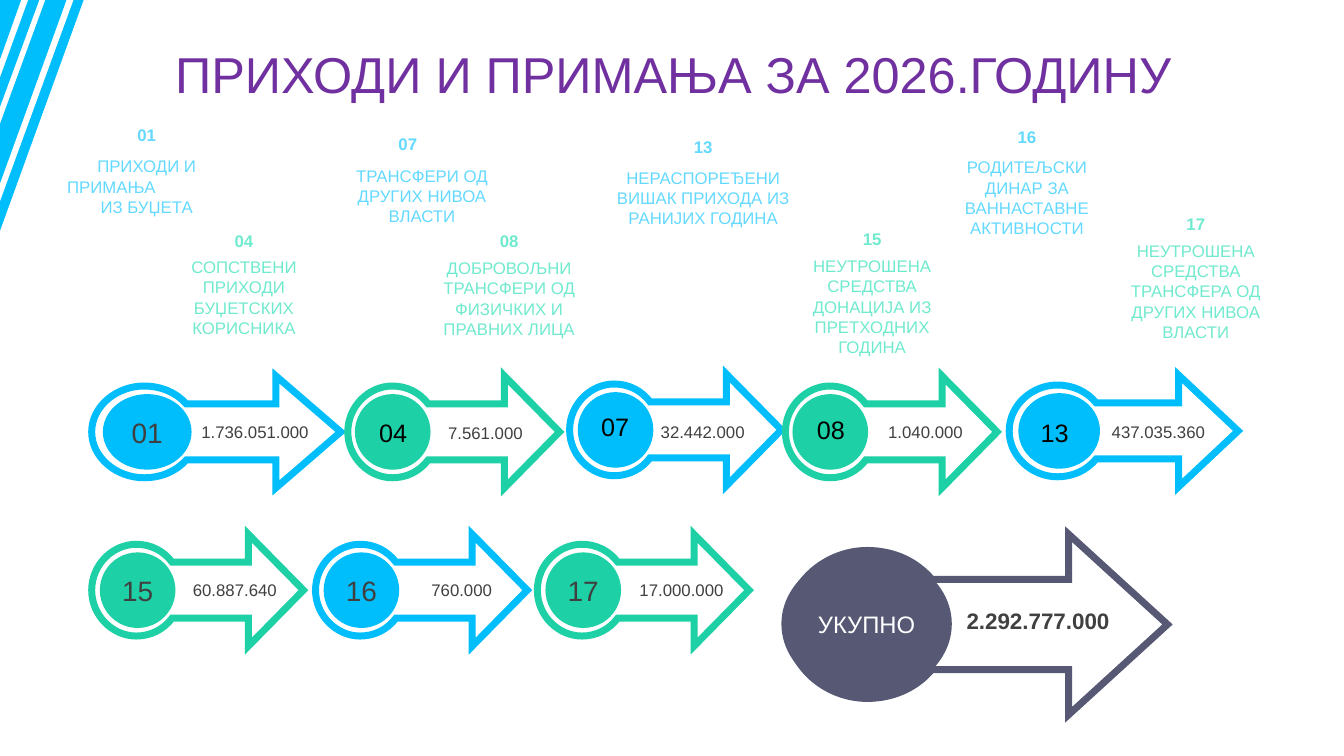
from lxml.etree import SubElement
from pptx import Presentation
from pptx.dml.color import RGBColor
from pptx.enum.shapes import MSO_SHAPE as Preset
from pptx.enum.text import MSO_ANCHOR as Anchor, PP_ALIGN as Align
from pptx.oxml.ns import qn
from pptx.util import Inches, Pt

BLUE = RGBColor(0x00, 0xBD, 0xFB)
GREEN = RGBColor(0x1E, 0xD0, 0xA6)
LIGHT_BLUE = RGBColor(0x64, 0xD9, 0xFF)
LIGHT_GREEN = RGBColor(0x70, 0xEA, 0xCE)
SLATE = RGBColor(0x56, 0x58, 0x74)
PURPLE = RGBColor(0x70, 0x30, 0xA0)
GREY = RGBColor(0x40, 0x40, 0x40)
BLACK = RGBColor(0x00, 0x00, 0x00)
WHITE = RGBColor(0xFF, 0xFF, 0xFF)

deck = Presentation()
deck.slide_width, deck.slide_height = Inches(13.33), Inches(7.5)
page = deck.slides.add_slide(deck.slide_layouts[5])


def write_text(text, holder=None, at=None, size=12, color=GREY, bold=False,
               anchor=Anchor.MIDDLE, wrap=True):
    """Write centred text into a shape, or into a new text box placed at `at`."""
    holder = holder or page.shapes.add_textbox(*map(Inches, at))
    frame = holder.text_frame
    frame.text = text
    frame.word_wrap = wrap
    frame.vertical_anchor = anchor
    for para in frame.paragraphs:
        para.alignment = Align.CENTER
        para.font.name = "Arial"
        para.font.size = Pt(size)
        para.font.bold = bold
        para.font.color.rgb = color
    return frame


def draw_outline(contours, fill, line=None, curves=0):
    """Draw closed contours of (x, y) inches; the last `curves` point triples are Béziers."""
    contours = [[(Inches(x), Inches(y)) for x, y in contour] for contour in contours]
    builder = page.shapes.build_freeform(*contours[0][0])
    builder.add_line_segments(contours[0][1:])
    for contour in contours[1:]:
        builder.move_to(*contour[0])
        builder.add_line_segments(contour[1:])
    shape = builder.convert_to_shape()
    shape.shadow.inherit = False
    shape.fill.solid()
    shape.fill.fore_color.rgb = fill
    if line is None:
        shape.line.fill.background()
    else:
        shape.line.color.rgb = line
        shape.line.width = Pt(5)
        SubElement(shape.line._get_or_add_ln(), qn("a:miter"), lim="800000")
    if curves:
        outline = next(shape._element.iter(qn("a:path")))
        segments = outline.findall(qn("a:lnTo"))[-3 * curves:]
        closing = outline.find(qn("a:close"))
        for first in range(0, len(segments), 3):
            curve = SubElement(outline, qn("a:cubicBezTo"))
            for segment in segments[first:first + 3]:
                curve.append(segment[0])
                outline.remove(segment)
        outline.append(closing)


# Corner stripes
draw_outline([
    [(0.73, 0), (0.83, 0), (0, 2.29), (0, 2)],
    [(0.39, 0), (0, 1.06), (0, 0.77), (0.28, 0)],
    [(0.66, 0), (0, 1.82), (0, 1.23), (0.45, 0)],
    [(0, 0), (0.21, 0), (0, 0.59)],
], BLUE)

# Title
title = page.shapes.title
title.left, title.top, title.width, title.height = map(Inches, (0.35, 0.37, 12.66, 0.79))
heading = write_text("ПРИХОДИ И ПРИМАЊА ЗА 2026.ГОДИНУ", title, size=36, color=PURPLE)
heading.paragraphs[0].line_spacing = 0.9

# Legend: number, its left, description, its left, top, width, height, number step, colour
legend = [
    ("01", 0.46, "ПРИХОДИ И\nПРИМАЊА\nИЗ БУЏЕТА", 0.46, 1.19, 1.99, 0.71, 0.31, LIGHT_BLUE),
    ("04", 1.46, "СОПСТВЕНИ ПРИХОДИ БУЏЕТСКИХ КОРИСНИКА",
     1.46, 2.24, 1.92, 0.78, 0.26, LIGHT_GREEN),
    ("07", 3.05, "ТРАНСФЕРИ ОД ДРУГИХ НИВОА ВЛАСТИ",
     3.19, 1.28, 1.99, 0.71, 0.31, LIGHT_BLUE),
    ("08", 4.09, "ДОБРОВОЉНИ ТРАНСФЕРИ ОД ФИЗИЧКИХ И ПРАВНИХ ЛИЦА",
     4.09, 2.24, 1.92, 0.94, 0.27, LIGHT_GREEN),
    ("13", 5.98, "НЕРАСПОРЕЂЕНИ ВИШАК ПРИХОДА ИЗ РАНИЈИХ ГОДИНА",
     5.98, 1.31, 1.99, 0.71, 0.3, LIGHT_BLUE),
    ("15", 7.69, "НЕУТРОШЕНА СРЕДСТВА ДОНАЦИЈА ИЗ ПРЕТХОДНИХ ГОДИНА",
     7.69, 2.22, 1.92, 1.11, 0.27, LIGHT_GREEN),
    ("16", 9.19, "РОДИТЕЉСКИ ДИНАР ЗА ВАННАСТАВНЕ АКТИВНОСТИ",
     9.19, 1.21, 1.99, 0.91, 0.3, LIGHT_BLUE),
    ("17", 10.9, "НЕУТРОШЕНА СРЕДСТВА ТРАНСФЕРА ОД ДРУГИХ НИВОА ВЛАСТИ",
     10.9, 2.07, 1.92, 1.11, 0.27, LIGHT_GREEN),
]
for number, number_left, description, left, top, width, height, step, color in legend:
    write_text(number, at=(number_left, top, width, 0.3), color=color, bold=True,
               anchor=Anchor.TOP)
    label = write_text(description, at=(left, top + step, width, height), color=color,
                       anchor=Anchor.TOP)
    if number == "01":
        for para, margin in zip(label.paragraphs, (0, 0.7, 0)):
            para._p.get_or_add_pPr().set("marR", str(Inches(margin)))

# Arrows: label, its own place if it lies over the disc, arrow box, disc box, colour,
# amount and its box
arrows = [
    ("01", None, (0.91, 3.73, 2.47, 1.11), (1.02, 3.91, 0.88, 0.75), BLUE,
     "1.736.051.000", (1.78, 4.13, 1.5, 0.3)),
    ("04", (3.66, 4.09), (3.45, 3.73, 2.1, 1.11), (3.52, 3.91, 0.75, 0.75), GREEN,
     "7.561.000", (4.34, 4.14, 0.95, 0.3)),
    ("07", (5.86, 4.03), (5.65, 3.71, 2.1, 1.11), (5.73, 3.89, 0.75, 0.75), BLUE,
     "32.442.000", (6.44, 4.13, 1.06, 0.3)),
    ("08", (8, 4.06), (7.79, 3.73, 2.1, 1.11), (7.86, 3.91, 0.75, 0.75), GREEN,
     "1.040.000", (8.65, 4.13, 1.06, 0.3)),
    ("13", (10.22, 4.09), (10.01, 3.72, 2.27, 1.11), (10.1, 3.9, 0.81, 0.75), BLUE,
     "437.035.360", (10.84, 4.13, 1.3, 0.3)),
    ("15", None, (0.91, 5.3, 2.1, 1.11), (0.99, 5.48, 0.75, 0.75), GREEN,
     "60.887.640", (1.68, 5.7, 1.3, 0.3)),
    ("16", None, (3.13, 5.3, 2.1, 1.11), (3.21, 5.48, 0.75, 0.75), BLUE,
     "760.000", (3.93, 5.7, 1.3, 0.3)),
    ("17", None, (5.33, 5.3, 2.1, 1.11), (5.41, 5.48, 0.75, 0.75), GREEN,
     "17.000.000", (6.11, 5.7, 1.3, 0.3)),
    ("УКУПНО", None, (7.81, 5.3, 3.77, 1.79), (7.75, 5.48, 1.69, 1.42), SLATE,
     "2.292.777.000", (9.44, 5.97, 1.71, 0.37)),
]
# Arrow head, then the Bézier points of the round tail, as fractions of the arrow box
head = [(0.38, 0.25), (0.74, 0.25), (0.74, 0), (1, 0.5), (0.74, 1), (0.74, 0.75), (0.38, 0.75)]
tail = [(0.34, 0.85), (0.28, 0.91), (0.21, 0.91), (0.1, 0.91), (0, 0.73), (0, 0.5),
        (0, 0.27), (0.1, 0.09), (0.21, 0.09), (0.28, 0.09), (0.34, 0.15), (0.38, 0.25)]
for text, label_place, box, disc_box, color, amount, amount_box in arrows:
    left, top, width, height = box
    draw_outline([[(left + x * width, top + y * height) for x, y in head + tail]],
                 WHITE, color, curves=4)
    disc = page.shapes.add_shape(Preset.OVAL, *map(Inches, disc_box))
    disc.shadow.inherit = False
    disc.fill.solid()
    disc.fill.fore_color.rgb = color
    disc.line.fill.background()
    total = color == SLATE
    if label_place:
        write_text(text, at=(*label_place, 0.48, 0.4), size=18, color=BLACK,
                   anchor=Anchor.TOP, wrap=False)
    else:
        write_text(text, disc, size=17 if total else 20, color=WHITE if total else GREY,
                   wrap=False)
    write_text(amount, at=amount_box, size=16 if total else 12, bold=total)

deck.save("out.pptx")
